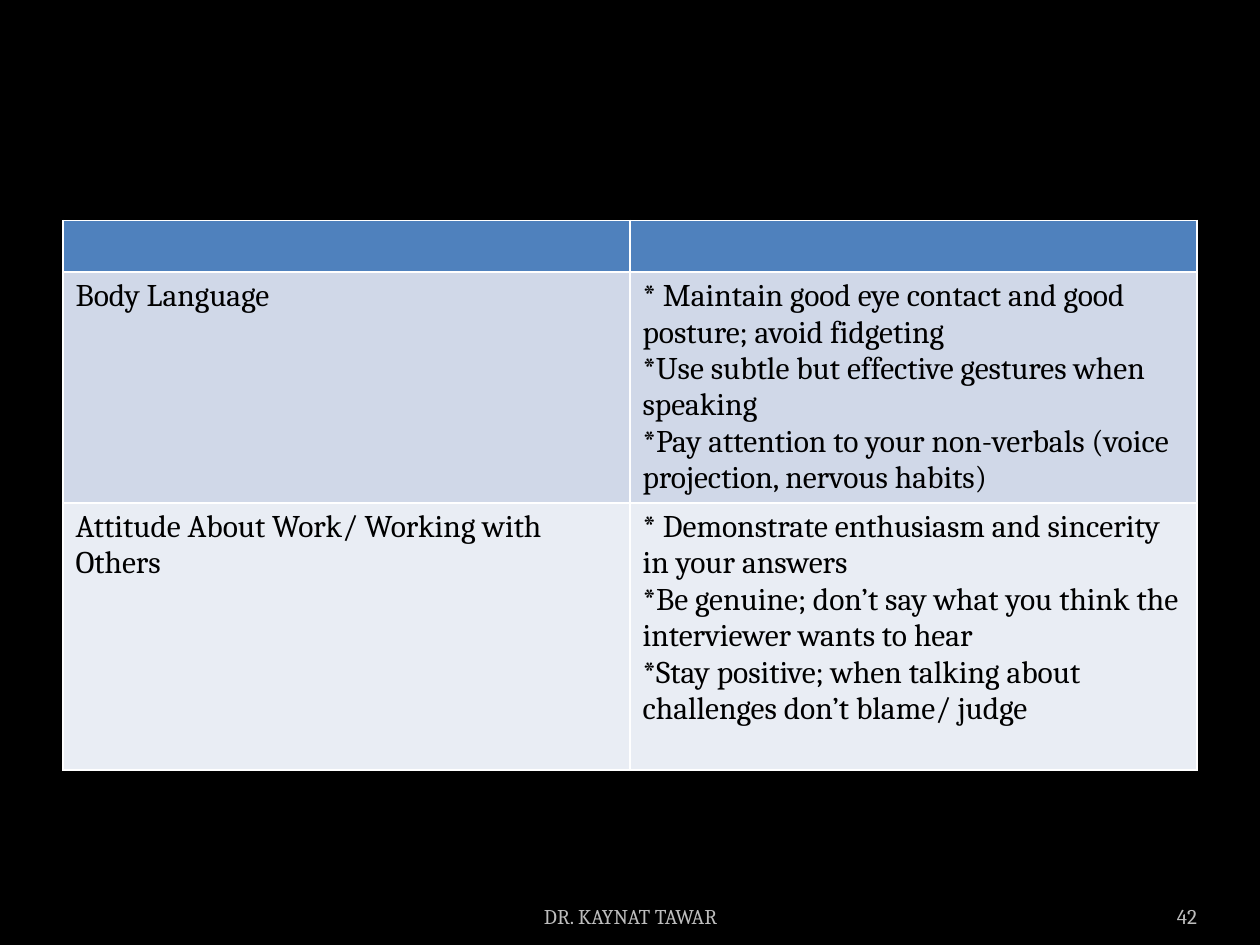
from pptx import Presentation
from pptx.dml.color import RGBColor
from pptx.enum.text import MSO_ANCHOR, PP_ALIGN
from pptx.util import Inches, Pt

BLANK_LAYOUT = 6
BOTTOM = MSO_ANCHOR.BOTTOM
CENTER, RIGHT = PP_ALIGN.CENTER, PP_ALIGN.RIGHT
FONT = "Cambria"
COLORS = {
    "background": "000000",
    "header": "4F81BD",
    "odd_row": "D0D8E8",
    "even_row": "E9EDF4",
    "text": "000000",
    "footer": "BDBDBD",
}
ROWS = [
    ("header", 0.41, [[], []]),
    ("odd_row", 1.83, [
        ["Body Language"],
        ["* Maintain good eye contact and good posture; avoid fidgeting",
         "*Use subtle but effective gestures when speaking",
         "*Pay attention to your non-verbals (voice projection, nervous habits)"],
    ]),
    ("even_row", 2.12, [
        ["Attitude About Work/ Working with Others"],
        ["* Demonstrate enthusiasm and sincerity in your answers",
         "*Be genuine; don’t say what you think the interviewer wants to hear",
         "*Stay positive; when talking about challenges don’t blame/ judge"],
    ]),
]


def set_fill(fill, color):
    """Give a fill one solid named colour."""
    fill.solid()
    fill.fore_color.rgb = RGBColor.from_string(COLORS[color])


def write_lines(frame, lines, size, color, align=None):
    """Write each line as a paragraph in one font."""
    frame.text = "\n".join(lines)
    for para in frame.paragraphs:
        para.alignment = align
        para.font.name = FONT
        para.font.size = Pt(size)
        para.font.color.rgb = RGBColor.from_string(COLORS[color])


def add_tips_table(page):
    """Add the table of interview tips."""
    height = sum(row[1] for row in ROWS)
    table = page.shapes.add_table(
        len(ROWS), 2, Inches(0.5), Inches(1.75), Inches(9), Inches(height)).table
    for row, (color, row_height, contents) in zip(table.rows, ROWS):
        row.height = Inches(row_height)
        for cell, lines in zip(row.cells, contents):
            set_fill(cell.fill, color)
            write_lines(cell.text_frame, lines, 18, "text")


def add_footer(page, text, left, width, align, side_margin):
    """Add one text box on the footer line."""
    box = page.shapes.add_textbox(
        Inches(left), Inches(7.02), Inches(width), Inches(0.4))
    frame = box.text_frame
    frame.word_wrap = True
    frame.vertical_anchor = BOTTOM
    frame.margin_left = frame.margin_right = Inches(side_margin)
    write_lines(frame, [text], 12, "footer", align)


def main():
    """Build and save the slide."""
    deck = Presentation()
    deck.slide_width, deck.slide_height = Inches(10), Inches(7.5)
    page = deck.slides.add_slide(deck.slide_layouts[BLANK_LAYOUT])
    set_fill(page.background.fill, "background")
    add_tips_table(page)
    add_footer(page, "42", 8.67, 0.83, RIGHT, 0)
    add_footer(page, "DR. KAYNAT TAWAR", 3.42, 3.17, CENTER, 0.1)
    deck.save("out.pptx")


if __name__ == "__main__":
    main()
